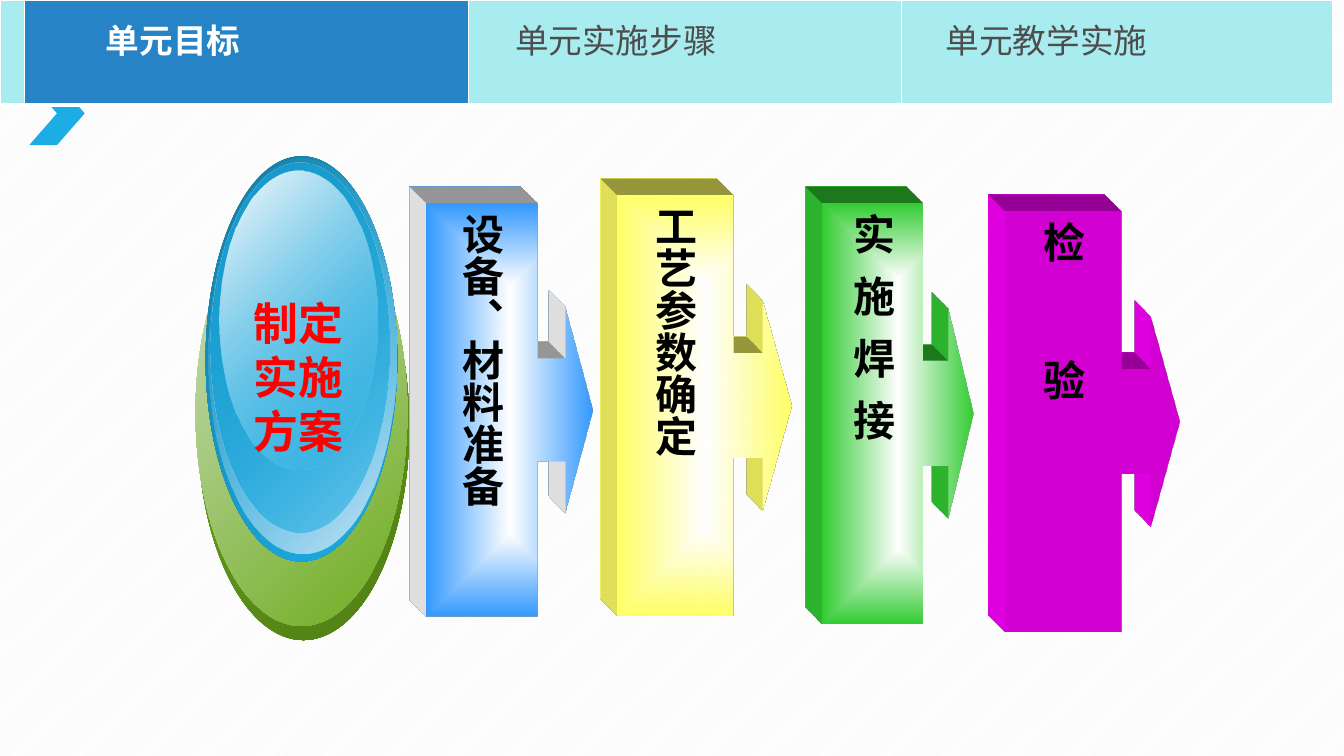
import pptx
import pptx.util
import pptx.dml.color
import pptx.enum.dml
import pptx.enum.shapes
import pptx.enum.text
import pptx.oxml
import pptx.oxml.ns

Inches = pptx.util.Inches
Pt = pptx.util.Pt
SHAPE = pptx.enum.shapes.MSO_SHAPE
ALIGN = pptx.enum.text.PP_ALIGN
ANCHOR = pptx.enum.text.MSO_ANCHOR
CJK = "Noto Sans CJK SC"
LINEAR = '<a:lin ang="2700000" scaled="1"/>'
CENTRED = '<a:path path="rect"><a:fillToRect l="50000" t="50000" r="50000" b="50000"/></a:path>'


def color(value):
    return pptx.dml.color.RGBColor.from_string(value)


def xml(tag, body="", attrs=""):
    ns = pptx.oxml.ns.nsdecls("a")
    return pptx.oxml.parse_xml(f"<a:{tag} {ns} {attrs}>{body}</a:{tag}>")


def add_run(p, text, size, fill, font="Arial", bold=True, spacing=0):
    r = p.add_run()
    r.text = text
    r.font.size = Pt(size)
    r.font.bold = bold
    r.font.name = font
    r.font.color.rgb = color(fill)
    rpr = r.font._element
    rpr.append(xml("ea", attrs=f'typeface="{CJK}"'))
    if spacing:
        rpr.set("spc", str(int(spacing * 100)))


def add_solid(shapes, kind, box, fill):
    sp = shapes.add_shape(kind, *map(Inches, box))
    sp.shadow.inherit = False
    sp.line.fill.background()
    sp.fill.solid()
    sp.fill.fore_color.rgb = color(fill)
    return sp


def set_gradient(sp, stops, direction):
    body = ""
    for position, (value, alpha) in zip((0, 100), stops):
        body += (f'<a:gs pos="{position * 1000}"><a:srgbClr val="{value}">'
                 f'<a:alpha val="{alpha * 1000}"/></a:srgbClr></a:gs>')
    solid = sp._element.spPr.find(pptx.oxml.ns.qn("a:solidFill"))
    sp._element.spPr.replace(
        solid, xml("gradFill", f"<a:gsLst>{body}</a:gsLst>{direction}", 'rotWithShape="1"'))


def add_extrusion(sp, side):
    sppr = sp._element.spPr
    sppr.append(xml("scene3d", '<a:camera prst="legacyObliqueTopLeft"/>'
                               '<a:lightRig rig="legacyFlat3" dir="b"/>'))
    sppr.append(xml("sp3d", '<a:bevelT w="13500" h="13500" prst="angle"/>'
                            '<a:bevelB w="13500" h="13500" prst="angle"/>'
                            f'<a:extrusionClr><a:srgbClr val="{side}"/></a:extrusionClr>',
                    'extrusionH="430200" prstMaterial="legacyMatte"'))


def add_plan_oval(s, left, top):
    group = s.shapes.add_group_shape()
    layers = [
        (0.02, 0.56, 2.1, 4.24, ("6EAC1C", 100), ("507E14", 100)),
        (0, 0.42, 2.1, 4.24, ("CFDFC6", 100), ("6EAC1C", 100)),
        (0.1, 0, 1.9, 4.02, ("147CA3", 100), ("1CADE4", 100)),
        (0.13, 0.02, 1.86, 3.92, ("1CADE4", 0), ("D4E7F6", 100)),
        (0.15, 0.06, 1.77, 3.67, ("199CCE", 100), ("1CADE4", 48)),
        (0.24, 0.14, 1.56, 2.97, ("FFFFFF", 100), ("1CADE4", 38)),
    ]
    for dx, dy, width, height, *stops in layers:
        sp = add_solid(group.shapes, SHAPE.OVAL, (left + dx, top + dy, width, height), stops[0][0])
        set_gradient(sp, stops, LINEAR)
    tb = group.shapes.add_textbox(*map(Inches, (left + 0.39, top + 1.33, 1.26, 1.72)))
    tf = tb.text_frame
    tf.word_wrap = True
    for i, line in enumerate(("制定", "实施", "方案")):
        p = tf.paragraphs[0] if i == 0 else tf.add_paragraph()
        p.alignment = ALIGN.CENTER
        p.line_spacing = Pt(38.6)
        add_run(p, line, 32, "FF0000")


def add_step(s, box, text, fill, side, gradient=True, font="Arial", spacing=0):
    width, height = box[2:]
    sp = add_solid(s.shapes, SHAPE.RIGHT_ARROW_CALLOUT, box, fill)
    shaft = height / 4 / width
    for i, value in enumerate((shaft, shaft, 1 / 6, 2 / 3)):
        sp.adjustments[i] = value
    if gradient:
        set_gradient(sp, (("FFFFFF", 100), (fill, 100)), CENTRED)
    add_extrusion(sp, side)
    tf = sp.text_frame
    tf.word_wrap = True
    tf.vertical_anchor = ANCHOR.MIDDLE
    tf._txBody.bodyPr.set("vert", "eaVert")
    p = tf.paragraphs[0]
    p.alignment = ALIGN.LEFT
    if spacing:
        add_run(p, text[:-1], 30, "000000", font, spacing=spacing)
        add_run(p, text[-1], 30, "000000", font)
    else:
        add_run(p, text, 30, "000000", font)


def add_navigation(s, left, top, width, height):
    tabs = [
        (0.24, "", 0.1, "A8ECEF", "4D4D4D", False),
        (4.41, "单元目标", 0.81, "2683C6", "FFFFFF", True),
        (4.29, "单元实施步骤", 0.46, "A8ECEF", "4D4D4D", False),
        (4.28, "单元教学实施", 0.44, "A8ECEF", "4D4D4D", False),
    ]
    frame = s.shapes.add_table(1, len(tabs), *map(Inches, (left, top, width, height)))
    table = frame.table
    for i, (column, text, indent, fill, ink, bold) in enumerate(tabs):
        table.columns[i].width = Inches(column)
        cell = table.cell(0, i)
        cell.fill.solid()
        cell.fill.fore_color.rgb = color(fill)
        cell.margin_left = Inches(indent)
        for k, (edge, points) in enumerate((("L", 1), ("R", 1), ("T", 1), ("B", 3))):
            line = xml(f"ln{edge}", '<a:solidFill><a:srgbClr val="FFFFFF"/></a:solidFill>',
                       f'w="{Pt(points)}"')
            cell._tc.tcPr.insert(k, line)
        if text:
            p = cell.text_frame.paragraphs[0]
            p.line_spacing = 1.2
            add_run(p, text, 24, ink, CJK, bold)


def main():
    prs = pptx.Presentation()
    prs.slide_width = Inches(13.33)
    prs.slide_height = Inches(7.5)
    s = prs.slides.add_slide(prs.slide_layouts[6])
    background = s.background.fill
    background.patterned()
    background.pattern = pptx.enum.dml.MSO_PATTERN.LIGHT_UPWARD_DIAGONAL
    background.fore_color.rgb = color("F2F2F2")
    background.back_color.rgb = color("FFFFFF")

    add_solid(s.shapes, SHAPE.CHEVRON, (0.29, 0.81, 0.55, 0.63), "1CADE4")
    add_plan_oval(s, 1.94, 1.55)
    add_step(s, (4.23, 2.02, 1.65, 4.1), "设备、材料准备", "3399FF", "FFFFFF")
    add_step(s, (6.12, 1.94, 1.73, 4.17), "工艺参数确定", "FFFF66", "FFFF66")
    add_step(s, (8.16, 2.02, 1.5, 4.17), "实施焊接", "33CC33", "33CC33", font=CJK, spacing=14.3)
    add_step(s, (9.97, 2.1, 1.73, 4.17), "检验", "FF00FF", "FF00FF", gradient=False, spacing=68.6)
    add_navigation(s, 0, 0, 13.22, 1.04)
    prs.save("out.pptx")


if __name__ == "__main__":
    main()
